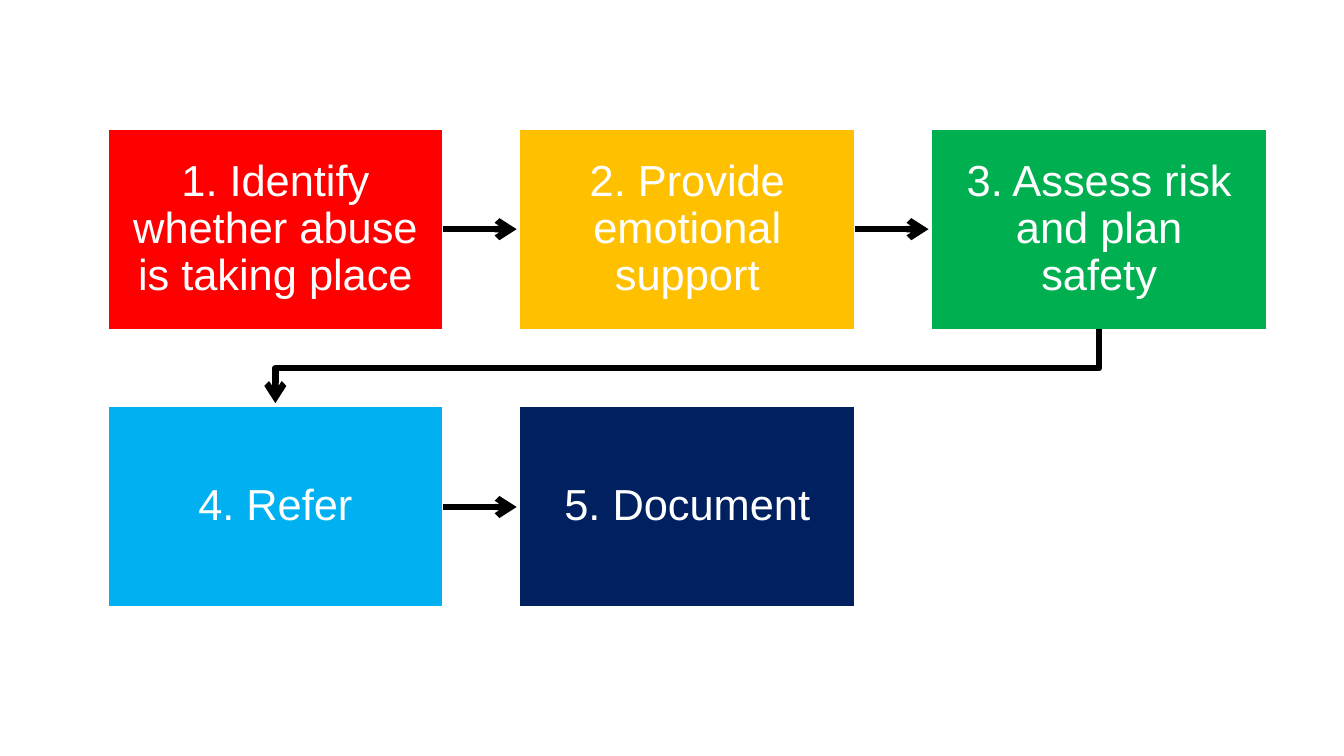
from pptx import Presentation
from pptx.dml.color import RGBColor
from pptx.enum.shapes import MSO_CONNECTOR, MSO_SHAPE
from pptx.enum.text import MSO_ANCHOR, PP_ALIGN
from pptx.oxml.ns import qn
from pptx.util import Cm, Pt
from lxml.etree import SubElement

LEFT, TOP = 2.72, 3.25
WIDTH, HEIGHT = 8.44, 5.05
STEP_X, STEP_Y = 10.38, 7.0
REACH = 1.86
COLS = 3

STEPS = [
    ("1. Identify whether abuse is taking place", "FF0000"),
    ("2. Provide emotional support", "FFC000"),
    ("3. Assess risk and plan safety", "00B050"),
    ("4. Refer", "00B0F0"),
    ("5. Document", "002060"),
]


def color(code):
    return RGBColor.from_string(code)


def add_box(slide, index, text, fill):
    row, col = divmod(index, COLS)
    box = slide.shapes.add_shape(
        MSO_SHAPE.RECTANGLE, Cm(LEFT + col * STEP_X), Cm(TOP + row * STEP_Y),
        Cm(WIDTH), Cm(HEIGHT))
    box.shadow.inherit = False
    box.fill.solid()
    box.fill.fore_color.rgb = color(fill)
    box.line.color.rgb = color("FFFFFF")
    box.line.width = Pt(1)

    frame = box.text_frame
    frame.word_wrap = True
    frame.vertical_anchor = MSO_ANCHOR.MIDDLE
    frame.margin_left = frame.margin_right = Cm(0.6)
    frame.margin_top = frame.margin_bottom = Cm(0.6)
    frame.text = text
    para = frame.paragraphs[0]
    para.alignment = PP_ALIGN.CENTER
    para.line_spacing = 0.9
    font = para.runs[0].font
    font.name = "Arial"
    font.size = Pt(31)
    font.color.rgb = color("FFFFFF")
    return box


def style_arrow(line):
    line.color.rgb = color("000000")
    line.width = Pt(4.5)
    SubElement(line._get_or_add_ln(), qn("a:tailEnd"), type="arrow")


def add_arrow(slide, box):
    """Draw a straight arrow from the right side of a box."""
    x, y = box.left + box.width, box.top + box.height // 2
    arrow = slide.shapes.add_connector(
        MSO_CONNECTOR.STRAIGHT, x, y, x + Cm(REACH), y)
    arrow.begin_connect(box, 3)
    style_arrow(arrow.line)
    SubElement(arrow._element.spPr, qn("a:effectLst"))


def add_bend(slide, start, end):
    """Draw a bent arrow from under one box to above another."""
    x1, x2 = (box.left + box.width // 2 for box in (start, end))
    low = start.top + start.height
    mid = (low + end.top) // 2
    path = slide.shapes.build_freeform(x1, low)
    path.add_line_segments(
        [(x1, mid), (x2, mid), (x2, low + Cm(REACH))], close=False)
    bend = path.convert_to_shape()
    bend.shadow.inherit = False
    bend.fill.background()
    style_arrow(bend.line)


def main():
    deck = Presentation()
    deck.slide_width, deck.slide_height = Cm(33.87), Cm(19.05)
    slide = deck.slides.add_slide(deck.slide_layouts[6])

    # Step boxes
    boxes = [add_box(slide, i, *step) for i, step in enumerate(STEPS)]

    # Arrows between steps
    for i, (box, after) in enumerate(zip(boxes, boxes[1:])):
        if (i + 1) % COLS:
            add_arrow(slide, box)
        else:
            add_bend(slide, box, after)

    deck.save("out.pptx")


if __name__ == "__main__":
    main()
